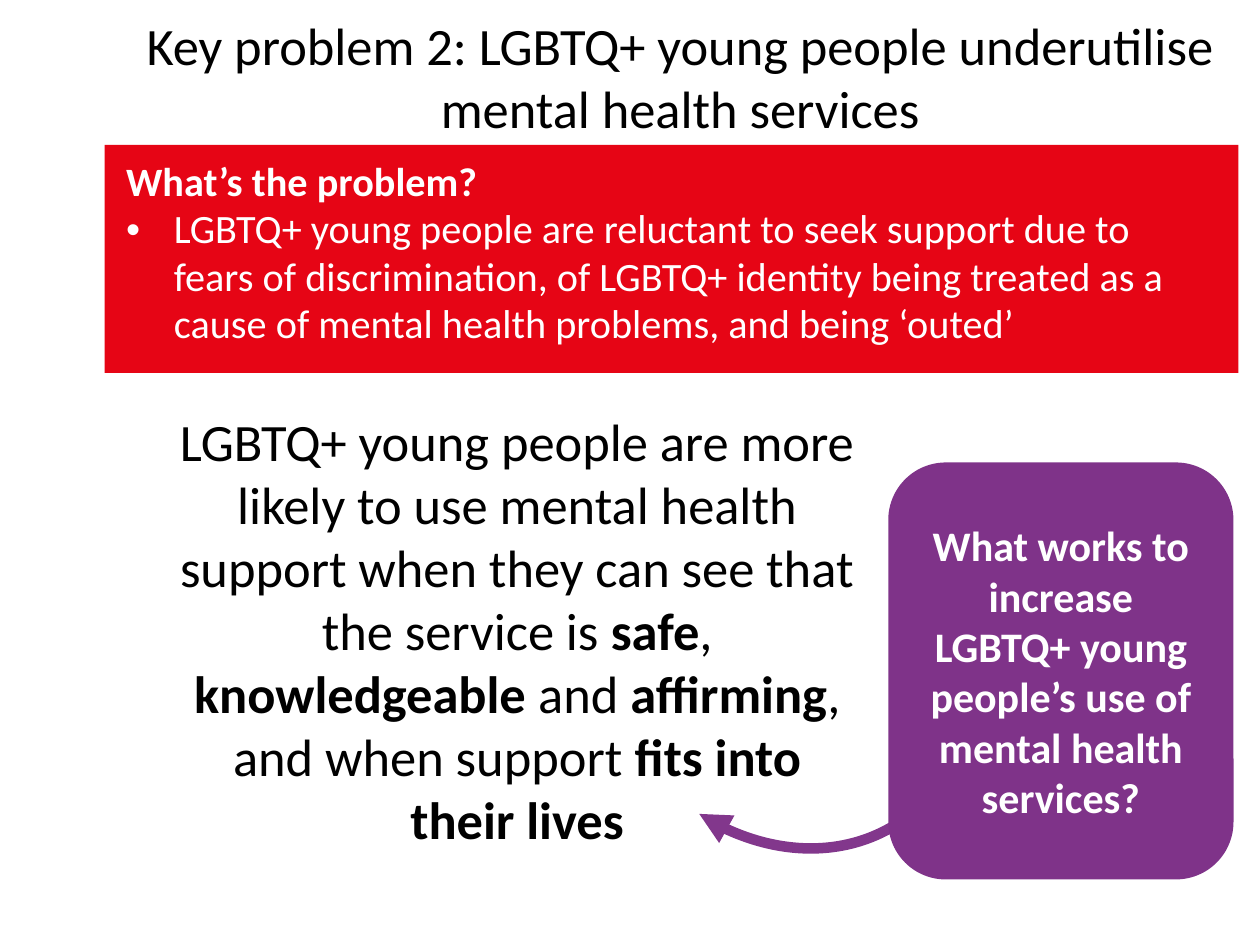
from lxml import etree
from pptx import Presentation
from pptx.dml.color import RGBColor
from pptx.enum import shapes, text
from pptx.oxml.ns import qn
from pptx.util import Inches, Pt

THEME = {
    "font": "Calibri",
    "black": RGBColor(0, 0, 0),
    "white": RGBColor(255, 255, 255),
    "red": RGBColor(0xE6, 0x05, 0x15),
    "purple": RGBColor(0x7F, 0x33, 0x89),
    "arrow": RGBColor(0x82, 0x37, 0x8C),
    "large": 30, "medium": 24, "small": 23,
}

# A paragraph is a list of (text, bold) runs.
TITLE = [[("Key problem 2: LGBTQ+ young people underutilise mental health services", False)]]
PROBLEM = [
    [("What’s the problem?", True)],
    [("LGBTQ+ young people are reluctant to seek support due to fears of "
      "discrimination, of LGBTQ+ identity being treated as a cause of mental "
      "health problems, and being ‘outed’", False)],
]
QUESTION = [[("What works to increase LGBTQ+ young people’s use of mental health services?", True)]]
ANSWER = [[
    ("LGBTQ+ young people are more likely to use mental health support when "
     "they can see that the service is ", False),
    ("safe", True), (", ", False), ("knowledgeable", True), (" and ", False),
    ("affirming", True), (", and when support ", False), ("fits into their lives", True),
]]

BOXES = {
    "title": (0.9, 0.05, 9, 1.1),
    "banner": (0.83, 1.15, 9, 1.81),
    "problem": (0.9, 1.21, 8.88, 1.36),
    "question": (7.05, 3.67, 2.74, 3.31),
    "answer": (1.32, 3.2, 5.57, 3.75),
}
ARROW_CURVE = [(7.52, 6.14), (7.11, 6.76), (6.23, 6.91), (5.55, 6.46)]


def box(name):
    return [Inches(length) for length in BOXES[name]]


def place(shape, name):
    shape.left, shape.top, shape.width, shape.height = box(name)


def write(shape, paragraphs, *, size, color, align=text.PP_ALIGN.CENTER,
          anchor=text.MSO_ANCHOR.TOP, line_spacing=1.0, bullets=()):
    frame = shape.text_frame
    frame.word_wrap = True
    frame.auto_size = text.MSO_AUTO_SIZE.NONE
    frame.vertical_anchor = anchor
    for index, runs in enumerate(paragraphs):
        paragraph = frame.paragraphs[0] if index == 0 else frame.add_paragraph()
        set_bullet(paragraph, index in bullets)
        paragraph.alignment = align
        paragraph.line_spacing = line_spacing
        paragraph.space_before = Pt(0)
        for words, bold in runs:
            run = paragraph.add_run()
            run.text = words
            run.font.name = THEME["font"]
            run.font.size = Pt(size)
            run.font.bold = bold
            run.font.color.rgb = color


def set_bullet(paragraph, shown):
    properties = paragraph._p.get_or_add_pPr()
    indent = Inches(0.38) if shown else 0
    properties.set("marL", str(indent))
    properties.set("indent", str(-indent))
    if shown:
        etree.SubElement(properties, qn("a:buFont"), typeface="Arial")
        etree.SubElement(properties, qn("a:buChar"), char="•")
    else:
        etree.SubElement(properties, qn("a:buNone"))


def add_block(slide, kind, name, color):
    shape = slide.shapes.add_shape(kind, *box(name))
    shape.shadow.inherit = False
    shape.fill.solid()
    shape.fill.fore_color.rgb = color
    shape.line.fill.background()
    return shape


def add_curved_arrow(slide, points):
    """Draw one cubic Bezier with an arrowhead at its end."""
    start, *others = [(Inches(x), Inches(y)) for x, y in points]
    builder = slide.shapes.build_freeform(*start)
    builder.add_line_segments(others, close=False)
    shape = builder.convert_to_shape()
    shape.shadow.inherit = False
    shape.fill.background()
    shape.line.color.rgb = THEME["arrow"]
    shape.line.width = Pt(6)
    etree.SubElement(shape.line._get_or_add_ln(), qn("a:tailEnd"), type="triangle")

    outline = next(shape._element.iter(qn("a:path")))
    curve = etree.SubElement(outline, qn("a:cubicBezTo"))
    for segment in outline.findall(qn("a:lnTo")):
        curve.append(segment[0])
        outline.remove(segment)


def main():
    presentation = Presentation()
    presentation.slide_width, presentation.slide_height = Inches(10), Inches(7.5)
    slide = presentation.slides.add_slide(presentation.slide_layouts[1])
    title, problem = slide.shapes.title, slide.placeholders[1]

    add_curved_arrow(slide, ARROW_CURVE)
    add_block(slide, shapes.MSO_SHAPE.RECTANGLE, "banner", THEME["red"])
    for placeholder in (problem, title):  # bring in front of the banner
        slide.shapes._spTree.append(placeholder._element)
    place(problem, "problem")
    write(problem, PROBLEM, size=THEME["small"], color=THEME["white"],
          align=text.PP_ALIGN.LEFT, line_spacing=0.98, bullets=(1,))
    place(title, "title")
    write(title, TITLE, size=THEME["large"], color=THEME["black"])

    question = add_block(slide, shapes.MSO_SHAPE.ROUNDED_RECTANGLE, "question", THEME["purple"])
    write(question, QUESTION, size=THEME["medium"], color=THEME["white"],
          anchor=text.MSO_ANCHOR.MIDDLE)
    answer = slide.shapes.add_textbox(*box("answer"))
    write(answer, ANSWER, size=THEME["large"], color=THEME["black"])

    presentation.save("out.pptx")


if __name__ == "__main__":
    main()
